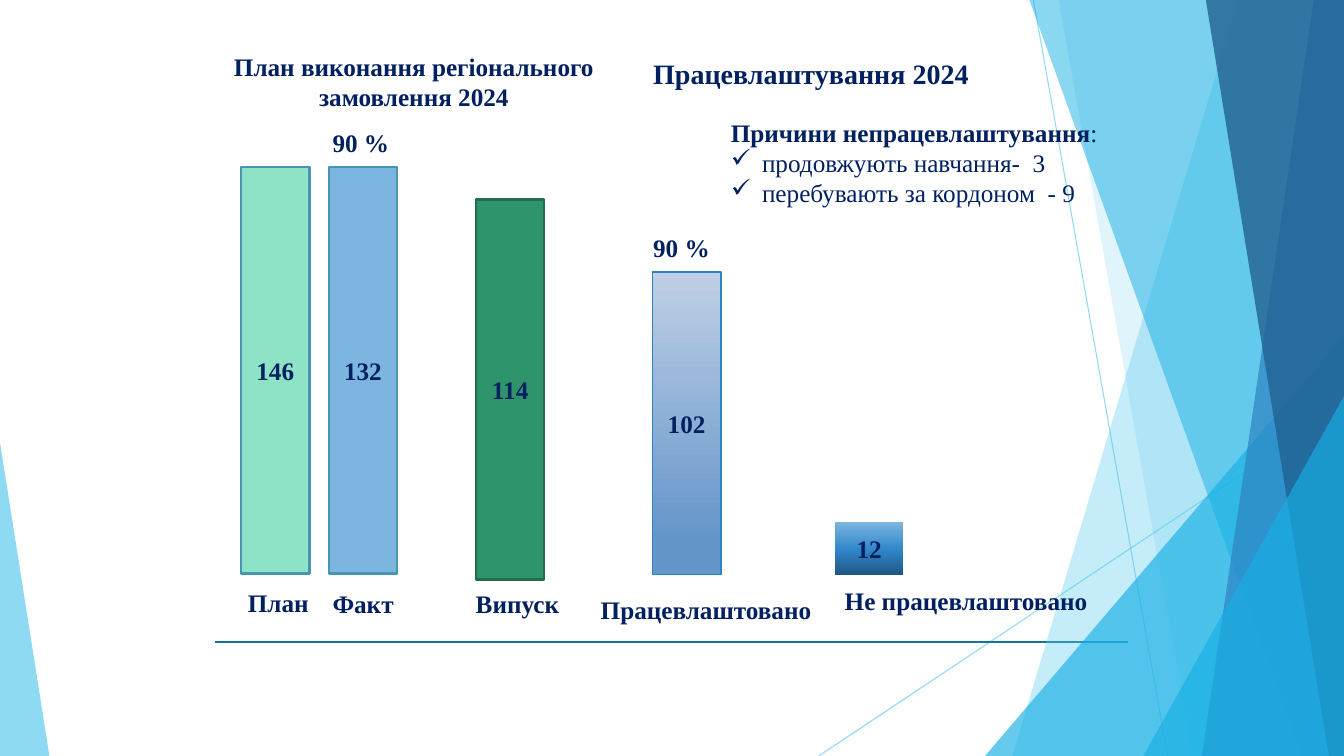
"""Build the slide on the 2024 training plan and graduate employment."""
import copy

import pptx
import pptx.dml.color
import pptx.enum.shapes
import pptx.enum.text
import pptx.oxml.ns
import pptx.util
from lxml import etree

qn = pptx.oxml.ns.qn
PRESET = pptx.enum.shapes.MSO_SHAPE
ALIGN = pptx.enum.text.PP_ALIGN
NAVY, SKY, AZURE = "002060", "5FCBEF", "17B0E4"
ROWS, COLUMNS = 75, 133.3
BAR_WIDTH = 6.8

deck = pptx.Presentation()
deck.slide_width = pptx.util.Inches(13.33)
deck.slide_height = pptx.util.Inches(7.5)
slide = deck.slides.add_slide(deck.slide_layouts[6])
shapes = slide.shapes


def grid(*cells):
    """Turn counts of grid cells into lengths."""
    return [round(cell * deck.slide_height / ROWS) for cell in cells]


def tint(color, code, element=None, opacity=100):
    """Set a colour from a hex string, and its opacity within an element."""
    color.rgb = pptx.dml.color.RGBColor.from_string(code)
    if opacity < 100:
        for node in element.iter(qn("a:srgbClr")):
            etree.SubElement(node, qn("a:alpha")).set("val", str(opacity * 1000))


rules = [
    ((102.5, 0, 115.8, ROWS), SKY, 0.75, 70),
    ((COLUMNS, 40.3, 81.2, ROWS), SKY, 0.75, 70),
    ((21.3, 63.7, 111.9, 63.7), "0F7698", 1.5, 100),
]
for ends, code, weight, opacity in rules:
    rule = shapes.add_connector(pptx.enum.shapes.MSO_CONNECTOR.STRAIGHT, *grid(*ends))
    rule.line.width = pptx.util.Pt(weight)
    tint(rule.line.color, code, rule.element.spPr, opacity)
    etree.SubElement(rule.element.spPr, qn("a:effectLst"))

right_edge = [(COLUMNS, 0), (COLUMNS, ROWS)]
facets = [
    ([(122.8, 0), *right_edge, (100.4, ROWS)], SKY, 36),
    ([(105, 0), *right_edge, (118.3, ROWS)], SKY, 20),
    ([(COLUMNS, 33.3), (COLUMNS, ROWS), (97.7, ROWS)], AZURE, 66),
    ([(102.1, 0), *right_edge, (129.1, ROWS)], AZURE, 50),
    ([(130.3, 0), *right_edge, (119.2, ROWS)], "2E83C3", 70),
    ([(119.6, 0), *right_edge, (131.8, ROWS)], "226292", 80),
    ([(COLUMNS, 39.3), (COLUMNS, ROWS), (113.4, ROWS)], AZURE, 66),
    ([(0, 43.9), (4.9, ROWS), (0, ROWS)], SKY, 70),
]
for corners, code, opacity in facets:
    if len(corners) == 3:
        apex, top = corners[0]
        left = min(column for column, row in corners)
        width = max(column for column, row in corners) - left
        facet = shapes.add_shape(PRESET.ISOSCELES_TRIANGLE, *grid(left, top, width, ROWS - top))
        facet.adjustments[0] = (apex - left) / width
    else:
        outline = shapes.build_freeform(*grid(*corners[0]))
        outline.add_line_segments([grid(*corner) for corner in corners[1:]], close=True)
        facet = outline.convert_to_shape()
    facet.shadow.inherit = False
    facet.line.fill.background()
    facet.fill.solid()
    tint(facet.fill.fore_color, code, facet.element.spPr, opacity)

lettering = []

bars = [
    ("146", 23.9, 16.6, 56.9, [(0, "8EE3C7")], "4696B1", 1.5),
    ("132", 32.6, 16.6, 56.9, [(0, "7CB5E0")], "4696B1", 1.5),
    ("114", 47.2, 19.8, 57.5, [(0, "2E946B")], "226D4F", 1.5),
    ("102", 64.7, 27, 57, [(0, "BFCFE5"), (0.88, "6596CA")], "2E83C3", 1),
    ("12", 82.8, 51.8, 57, [(0, "7CB5E0"), (0.52, "3087CA"), (1, "1F5883")], None, 0),
]
for count, left, top, bottom, shades, edge, weight in bars:
    bar = shapes.add_shape(PRESET.RECTANGLE, *grid(left, top, BAR_WIDTH, bottom - top))
    bar.shadow.inherit = False
    if len(shades) == 1:
        bar.fill.solid()
        tint(bar.fill.fore_color, shades[0][1])
    else:
        bar.fill.gradient()
        bar.fill.gradient_angle = 270
        stops = bar.element.spPr.find(qn("a:gradFill")).find(qn("a:gsLst"))
        for extra in shades[2:]:
            stops.append(copy.deepcopy(stops[0]))
        for stop, (position, code) in zip(bar.fill.gradient_stops, shades):
            stop.position = position
            tint(stop.color, code)
    if edge:
        tint(bar.line.color, edge)
        bar.line.width = pptx.util.Pt(weight)
    else:
        bar.line.fill.background()
    bar.text_frame.vertical_anchor = pptx.enum.text.MSO_ANCHOR.MIDDLE
    lettering.append((bar.text_frame, [[(count, True)]], 18, ALIGN.CENTER))

reasons = [
    [("Причини непрацевлаштування", True), (":", False)],
    [("продовжують навчання-  3", False)],
    [("перебувають за кордоном  - 9", False)],
]
captions = [
    ([[("План виконання регіонального замовлення 2024", True)]], (21.3, 5.1, 39.5, 7.3), 18, ALIGN.CENTER, 0),
    ([[("Працевлаштування 2024", True)]], (63.8, 5.1, 36.1, 4.4), 20, ALIGN.LEFT, 0.5),
    ([[("90 %", True)]], (32, 12.1, 9, 4), 18, ALIGN.LEFT, 0.5),
    ([[("90 %", True)]], (63.8, 22.6, 13.6, 4), 18, ALIGN.LEFT, 0.5),
    ([[("План", True)]], (23.6, 57.8, 9, 4), 18, ALIGN.LEFT, 0.5),
    ([[("Факт", True)]], (32, 57.9, 9, 4), 18, ALIGN.LEFT, 0.5),
    ([[("Випуск", True)]], (46.2, 57.9, 14.8, 4), 18, ALIGN.LEFT, 0.5),
    ([[("Працевлаштовано", True)]], (58.6, 58.5, 24, 4), 18, ALIGN.LEFT, 0.5),
    ([[("Не працевлаштовано", True)]], (82.8, 57.6, 27, 4), 18, ALIGN.LEFT, 0.5),
    (reasons, (71.5, 11.1, 38.7, 10.1), 18, ALIGN.LEFT, 0.5),
]
for wording, box, size, align, inset in captions:
    caption = shapes.add_textbox(*grid(*box)).text_frame
    caption.word_wrap = True
    caption.margin_top, caption.margin_bottom = grid(inset, inset)
    lettering.append((caption, wording, size, align))

for frame, wording, size, align in lettering:
    for index, pieces in enumerate(wording):
        paragraph = frame.add_paragraph() if index else frame.paragraphs[0]
        paragraph.alignment = align
        if index:
            bulleted = paragraph._p.get_or_add_pPr()
            indent, = grid(3.1)
            bulleted.set("marL", str(indent))
            bulleted.set("indent", str(-indent))
            etree.SubElement(bulleted, qn("a:buChar")).set("char", "✓")
        for words, bold in pieces:
            run = paragraph.add_run()
            run.text = words
            style = {"name": "Times New Roman", "size": pptx.util.Pt(size), "bold": bold}
            for attribute, value in style.items():
                setattr(run.font, attribute, value)
            tint(run.font.color, NAVY)

deck.save("out.pptx")
